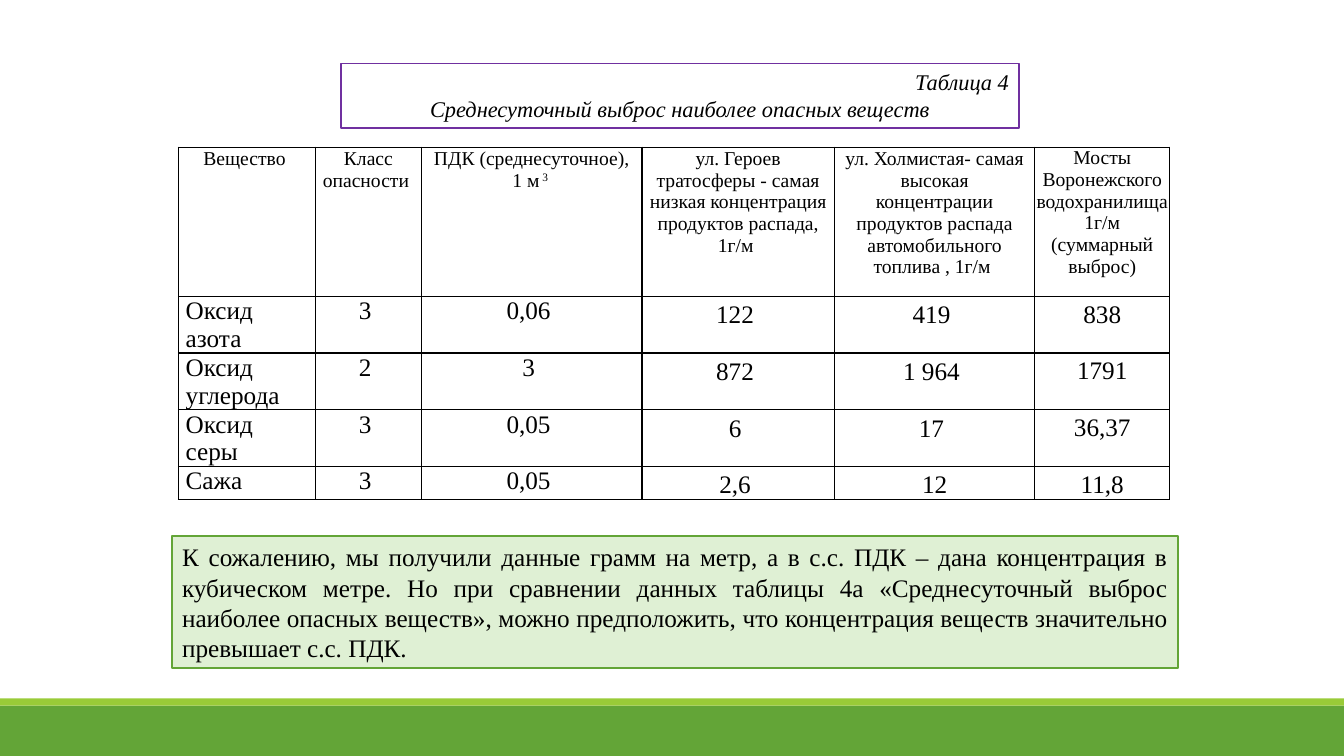
from lxml import etree
from pptx import Presentation
from pptx.dml.color import RGBColor
from pptx.enum import shapes, text
from pptx.oxml.ns import qn
from pptx.util import Cm, Pt

HUES = {"ink": "000000", "page": "FFFFFF", "green": "63A537",
        "lime": "99CB38", "mint": "DFF0D4", "violet": "7030A0"}
LEFT, MID, RIGHT, FULL = (text.PP_ALIGN.LEFT, text.PP_ALIGN.CENTER,
                          text.PP_ALIGN.RIGHT, text.PP_ALIGN.JUSTIFY)
WIDTH, HEIGHT = 33.87, 19.05
COLS = [3.45, 2.67, 5.56, 4.85, 5.05, 3.4]
TALL = [3.76, 1.27, 1.27, 1.27, 0.74]
PADS = [0.18, 0.02, 0.18, 0.18, 0.18, 0]
ROWS = [
    ["Вещество ", "Класс опасности ", "ПДК (среднесуточное), 1 м^ 3 ",
     "ул. Героев тратосферы - самая низкая концентрация продуктов распада, 1г/м ",
     "ул. Холмистая- самая высокая концентрации продуктов распада "
     "автомобильного топлива , 1г/м ",
     "Мосты Воронежского водохранилища\n1г/м (суммарный выброс)"],
    ["Оксид азота", "3 ", "0,06 ", "122 ", "419 ", "838"],
    ["Оксид углерода", "2 ", "3 ", "872 ", "1 964 ", "1791"],
    ["Оксид серы", "3 ", "0,05 ", "6 ", "17 ", "36,37"],
    ["Сажа", "3 ", "0,05 ", "2,6 ", "12", "11,8"],
]
NOTE = ("К сожалению, мы получили данные грамм на метр, а в с.с. ПДК – дана "
        "концентрация в кубическом метре. Но при сравнении данных таблицы 4а "
        "«Среднесуточный выброс наиболее опасных веществ», можно предположить, "
        "что концентрация веществ значительно превышает с.с. ПДК.")


def apply(item, form):
    for key, value in form.items():
        setattr(item, key, value)


class Deck:
    """Holds the text style and the current slide."""

    def __init__(self):
        self.show = Presentation()
        apply(self.show, {"slide_width": Cm(WIDTH), "slide_height": Cm(HEIGHT)})
        self.slide = self.show.slides.add_slide(self.show.slide_layouts[5])
        self.face = "Times New Roman"

    def hue(self, name):
        return RGBColor.from_string(HUES[name])

    def paint(self, shape, fill, line=None):
        shape.fill.solid()
        shape.fill.fore_color.rgb = self.hue(fill)
        if line:
            shape.line.color.rgb = self.hue(line)
            shape.line.width = Pt(1.25)
        else:
            shape.line.fill.background()

    def label(self, frame, lines, size, italic=False, space=1.0):
        for i, (words, align) in enumerate(lines):
            para = frame.add_paragraph() if i else frame.paragraphs[0]
            apply(para, {"alignment": align, "line_spacing": space})
            for j, part in enumerate(words.split("^")):
                run = para.add_run()
                run.text = part
                apply(run.font, {"name": self.face, "size": Pt(size), "italic": italic})
                run.font.color.rgb = self.hue("ink")
                if j:
                    run.font._element.set("baseline", "30000")

    def title(self, box, lines):
        shape = self.slide.shapes.title
        apply(shape, dict(zip(("left", "top", "width", "height"), map(Cm, box))))
        self.paint(shape, "page", "violet")
        apply(shape.text_frame, {"word_wrap": True,
                                 "auto_size": text.MSO_AUTO_SIZE.NONE,
                                 "vertical_anchor": text.MSO_ANCHOR.TOP})
        self.label(shape.text_frame, lines, 16, italic=True)

    def rect(self, box, fill, line=None):
        shape = self.slide.shapes.add_shape(shapes.MSO_SHAPE.RECTANGLE, *map(Cm, box))
        shape.shadow.inherit = False
        self.paint(shape, fill, line)
        return shape

    def note(self, box, words):
        frame = self.rect(box, "mint", "green").text_frame
        apply(frame, {"word_wrap": True, "vertical_anchor": text.MSO_ANCHOR.MIDDLE})
        self.label(frame, [(words, FULL)], 18)

    def edge(self, cell):
        props = cell._tc.get_or_add_tcPr()
        for side in ("lnL", "lnR", "lnT", "lnB"):
            line = etree.SubElement(props, qn(f"a:{side}"), w=str(Pt(1)))
            fill = etree.SubElement(line, qn("a:solidFill"))
            etree.SubElement(fill, qn("a:srgbClr"), val=HUES["ink"])

    def table(self, left, top):
        frame = self.slide.shapes.add_table(
            len(ROWS), len(COLS), Cm(left), Cm(top), Cm(sum(COLS)), Cm(sum(TALL)))
        grid = frame.table
        apply(grid, {"first_row": False, "horz_banding": False})
        for col, width in zip(grid.columns, COLS):
            col.width = Cm(width)
        for r, (row, high) in enumerate(zip(ROWS, TALL)):
            grid.rows[r].height = Cm(high)
            for c, words in enumerate(row):
                cell = grid.cell(r, c)
                apply(cell, {"margin_left": Cm(PADS[c]), "margin_right": Cm(PADS[c]),
                             "margin_top": Cm(0.02 if PADS[c] else 0),
                             "margin_bottom": 0})
                self.edge(cell)
                cell.fill.background()
                align = LEFT if r and not c else MID
                self.label(cell.text_frame, [(part, align) for part in words.split("\n")],
                           18 if r else 14, space=1.15 if r and c > 2 else 1.0)


def main():
    deck = Deck()
    deck.rect((0, 17.78, WIDTH, 1.27), "green")
    deck.rect((0, 17.6, WIDTH, 0.18), "lime")
    deck.title((8.59, 1.6, 17.09, 1.63),
               [("Таблица 4", RIGHT),
                ("Среднесуточный выброс наиболее опасных веществ", MID)])
    deck.table(4.5, 3.71)
    deck.note((4.34, 13.51, 25.35, 3.33), NOTE)
    deck.show.save("out.pptx")


if __name__ == "__main__":
    main()
